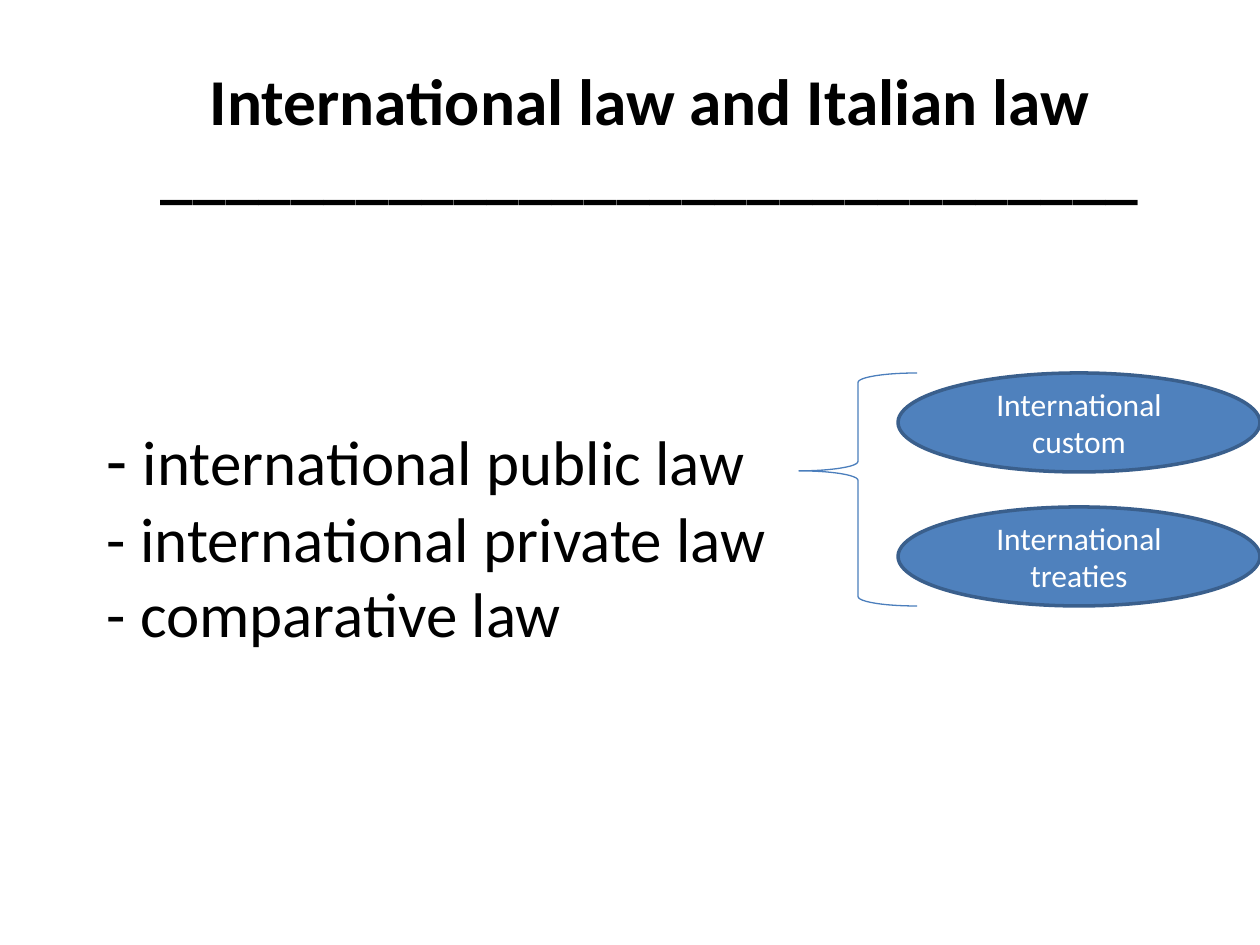
"""Build the slide on international law and Italian law."""
from dataclasses import dataclass

from lxml import etree
from pptx import Presentation
from pptx import util as u
from pptx.dml.color import RGBColor
from pptx.enum import shapes, text
from pptx.oxml.ns import qn

FONT = "Calibri"
BLACK, WHITE = "000000", "FFFFFF"
SOURCE_FILL, SOURCE_LINE, BRACE_LINE = "4F81BD", "3A5F8C", "4B7EBC"


@dataclass
class Box:
    """A frame in px."""
    left: int
    top: int
    width: int
    height: int


@dataclass
class Source:
    """A source of law and its top edge in px."""
    label: str
    top: int


TITLE = Box(115, 45, 1071, 189)
BODY = Box(94, 414, 700, 240)
BRACE = Box(799, 373, 118, 233)
TITLE_LINES = ["International law and Italian law", "_" * 30]
BRANCHES = ["international public law", "international private law", "comparative law"]
SOURCES = [Source("International custom", 373), Source("International treaties", 507)]


def px(n: int) -> int:
    """Turn px into EMU."""
    return round(n * u.Inches(1) / 126)


def color(value: str) -> RGBColor:
    """Turn a hex string into a colour."""
    return RGBColor.from_string(value)


def frame(box: Box) -> tuple[int, int, int, int]:
    """Give the frame of a box in EMU."""
    return px(box.left), px(box.top), px(box.width), px(box.height)


def add_run(p, words: str, size: float, hue: str, bold: bool = False) -> None:
    """Add one formatted run to a paragraph."""
    r = p.add_run()
    r.text = words
    r.font.name, r.font.size, r.font.bold = FONT, u.Pt(size), bold
    r.font.color.rgb = color(hue)


def place(sp, box: Box):
    """Move a placeholder and return its prepared text frame."""
    sp.left, sp.top, sp.width, sp.height = frame(box)
    tf = sp.text_frame
    tf.word_wrap = True
    tf.auto_size = text.MSO_AUTO_SIZE.NONE
    tf.vertical_anchor = text.MSO_ANCHOR.MIDDLE
    return tf


def add_paragraph(tf, index: int):
    """Return the first paragraph or a new one."""
    return tf.add_paragraph() if index else tf.paragraphs[0]


def fill_title(sp) -> None:
    """Write the title and its rule."""
    tf = place(sp, TITLE)
    for i, line in enumerate(TITLE_LINES):
        p = add_paragraph(tf, i)
        p.alignment, p.line_spacing = text.PP_ALIGN.CENTER, 0.9
        add_run(p, line, 37.4, BLACK, bold=True)


def fill_body(sp) -> None:
    """Write the branches of law as a dashed list."""
    tf = place(sp, BODY)
    for i, branch in enumerate(BRANCHES):
        p = add_paragraph(tf, i)
        p.space_before = u.Pt(0)
        pPr = p._p.get_or_add_pPr()
        pPr.set("marL", "0")
        pPr.set("indent", "0")
        etree.SubElement(pPr, qn("a:buNone"))
        add_run(p, "- ", 36 if i else 39, BLACK)
        add_run(p, branch, 36, BLACK)


def add_outline(s, kind: shapes.MSO_SHAPE, box: Box, line: str, width: float):
    """Add a preset shape with a plain outline."""
    sp = s.shapes.add_shape(kind, *frame(box))
    sp.shadow.inherit = False
    sp.line.color.rgb, sp.line.width = color(line), u.Pt(width)
    return sp


def add_source(s, source: Source) -> None:
    """Draw a source of law as an ellipse."""
    box = Box(898, source.top, 362, 99)
    sp = add_outline(s, shapes.MSO_SHAPE.OVAL, box, SOURCE_LINE, 2)
    sp.fill.solid()
    sp.fill.fore_color.rgb = color(SOURCE_FILL)
    tf = sp.text_frame
    tf.word_wrap = True
    tf.vertical_anchor = text.MSO_ANCHOR.MIDDLE
    p = tf.paragraphs[0]
    p.alignment = text.PP_ALIGN.CENTER
    add_run(p, source.label, 18, WHITE)


def add_brace(s) -> None:
    """Draw the brace that gathers the sources."""
    sp = add_outline(s, shapes.MSO_SHAPE.LEFT_BRACE, BRACE, BRACE_LINE, 0.75)
    sp.fill.background()
    sp.adjustments[0], sp.adjustments[1] = 0.08, 0.42


def main() -> None:
    """Build and save the slide."""
    prs = Presentation()
    prs.slide_width, prs.slide_height = u.Inches(10), u.Inches(7.5)
    s = prs.slides.add_slide(prs.slide_layouts[1])
    fill_title(s.shapes.title)
    fill_body(s.placeholders[1])
    for source in SOURCES:
        add_source(s, source)
    add_brace(s)
    prs.save("out.pptx")


if __name__ == "__main__":
    main()
